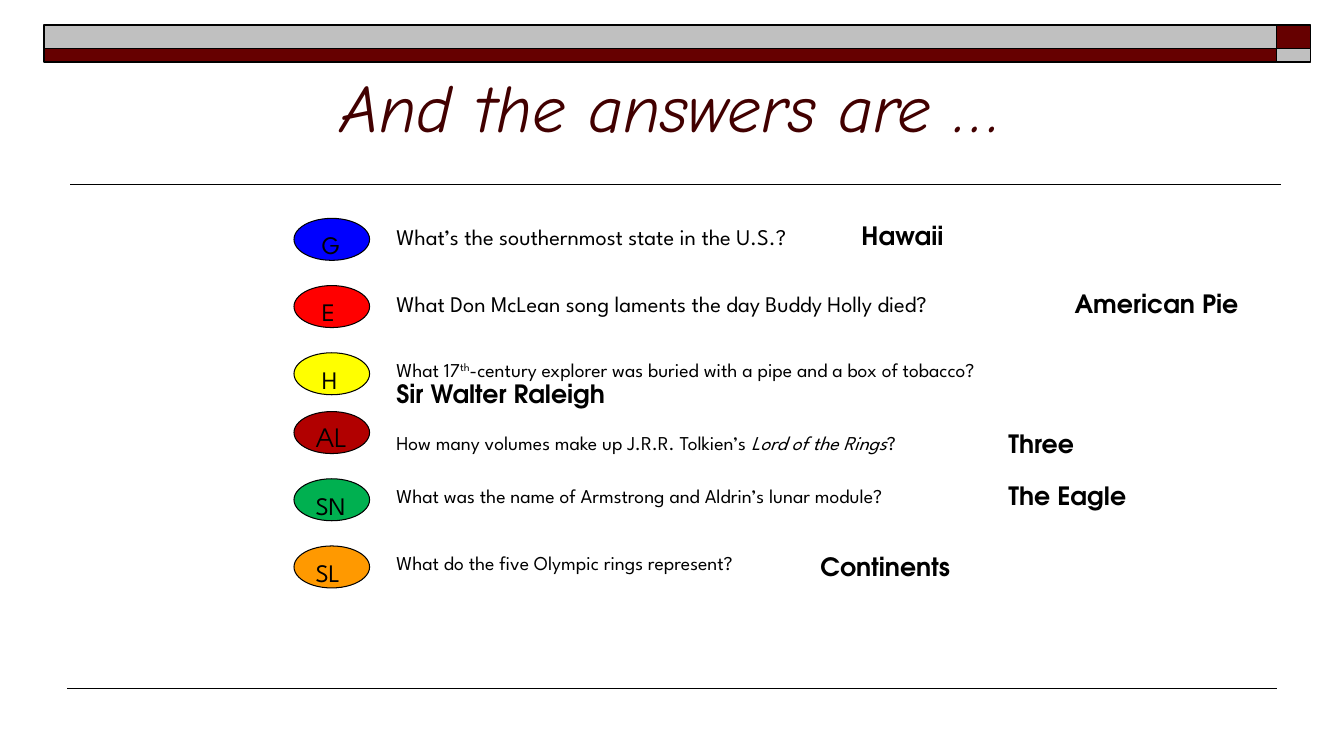
from pptx import Presentation
from pptx.dml.color import RGBColor
from pptx.enum.shapes import MSO_CONNECTOR, MSO_SHAPE
from pptx.enum.text import MSO_ANCHOR, PP_ALIGN
from pptx.util import Pt
from lxml import etree

PX = 9525
RECTANGLE, OVAL = MSO_SHAPE.RECTANGLE, MSO_SHAPE.OVAL
STRAIGHT = MSO_CONNECTOR.STRAIGHT
TOP, BOTTOM = MSO_ANCHOR.TOP, MSO_ANCHOR.BOTTOM
LEFT, CENTER = PP_ALIGN.LEFT, PP_ALIGN.CENTER

BLACK = RGBColor(0x00, 0x00, 0x00)
MAROON = RGBColor(0x66, 0x00, 0x00)
SILVER = RGBColor(0xC0, 0xC0, 0xC0)
TITLE_BROWN = RGBColor(0x42, 0x00, 0x00)
BLUE = RGBColor(0x00, 0x00, 0xFF)
RED = RGBColor(0xFF, 0x00, 0x00)
YELLOW = RGBColor(0xFF, 0xFF, 0x00)
DARK_RED = RGBColor(0xB1, 0x00, 0x00)
GREEN = RGBColor(0x00, 0xB0, 0x50)
ORANGE = RGBColor(0xFF, 0x99, 0x00)

TITLE_FONT = "Comic Neue"
QUESTION_FONT = "League Spartan"
ANSWER_FONT = "TeX Gyre Adventor"

deck = Presentation()
deck.slide_width, deck.slide_height = 1280 * PX, 720 * PX
page = deck.slides.add_slide(deck.slide_layouts[5])


def add_panel(kind, left, top, width, height, color, line_width):
    panel = page.shapes.add_shape(kind, left * PX, top * PX, width * PX, height * PX)
    panel.shadow.inherit = False
    panel.fill.solid()
    panel.fill.fore_color.rgb = color
    panel.line.color.rgb = BLACK
    panel.line.width = Pt(line_width)
    return panel


def write(frame, spans, size, font, bold=False):
    """Fill the frame with one paragraph of (text, style) spans."""
    frame.word_wrap = True
    frame.vertical_anchor = TOP
    para = frame.paragraphs[0]
    para.alignment = LEFT
    para.font.size = Pt(size)
    para.font.name = font
    para.font.bold = bold
    para.font.color.rgb = BLACK
    for text, style in spans:
        span = para.add_run()
        span.text = text
        if style == "italic":
            span.font.italic = True
        elif style == "superscript":
            span._r.get_or_add_rPr().set("baseline", "30000")


# Header bars
for left, top, width, height, color in [
    (1216, 24, 32, 22, MAROON),
    (42, 24, 1174, 22, SILVER),
    (42, 46, 1174, 13, MAROON),
    (1216, 46, 32, 13, SILVER),
]:
    add_panel(RECTANGLE, left, top, width, height, color, 1)

# Rules above and below the questions
for left, right, y, line_width in [(67, 1220, 176, 1), (64, 1216, 656, 0.75)]:
    rule = page.shapes.add_connector(STRAIGHT, left * PX, y * PX, right * PX, y * PX)
    rule.line.color.rgb = BLACK
    rule.line.width = Pt(line_width)
    etree.SubElement(
        rule._element.spPr,
        "{http://schemas.openxmlformats.org/drawingml/2006/main}effectLst")

# Title
title = page.shapes.title
title.left, title.top, title.width, title.height = 208 * PX, 24 * PX, 864 * PX, 120 * PX
title.text_frame.text = "And the answers are …"
title.text_frame.vertical_anchor = BOTTOM
heading = title.text_frame.paragraphs[0]
heading.alignment = CENTER
heading.font.size = Pt(48)
heading.font.name = TITLE_FONT
heading.font.italic = True
heading.font.color.rgb = TITLE_BROWN

# Category badges: top, letters, color, font, extra indent
for top, letters, color, font, indent in [
    (208, "G", BLUE, QUESTION_FONT, 6),
    (272, "E", RED, QUESTION_FONT, 6),
    (336, "H", YELLOW, QUESTION_FONT, 6),
    (392, "AL", DARK_RED, ANSWER_FONT, 0),
    (456, "SN", GREEN, QUESTION_FONT, 0),
    (520, "SL", ORANGE, QUESTION_FONT, 0),
]:
    badge = add_panel(OVAL, 280, top, 72, 40, color, 0.75)
    write(badge.text_frame, [(letters, None)], 18, font)
    badge.text_frame.margin_left = (10 + indent) * PX

# Questions: top, width, height, size, spans
for top, width, height, size, spans in [
    (208, 608, 36, 16, [("What’s the southernmost state in the U.S.?", None)]),
    (272, 648, 36, 16,
     [("What Don McLean song laments the day Buddy Holly died?", None)]),
    (336, 704, 33, 14,
     [("What 17", None), ("th", "superscript"),
      ("-century explorer was buried with a pipe and a box of tobacco?", None)]),
    (406, 680, 33, 14,
     [("How many volumes make up J.R.R. Tolkien’s ", None),
      ("Lord of the Rings", "italic"), ("?", None)]),
    (456, 704, 33, 14,
     [("What was the name of Armstrong and Aldrin’s lunar module?", None)]),
    (520, 688, 33, 14, [("What do the five Olympic rings represent?", None)]),
]:
    question = page.shapes.add_textbox(368 * PX, top * PX, width * PX, height * PX)
    write(question.text_frame, spans, size, QUESTION_FONT)

# Answers: left, top, width, text
for left, top, width, text in [
    (811, 205, 165, "Hawaii"),
    (1014, 270, 212, "American Pie"),
    (368, 356, 251, "Sir Walter Raleigh"),
    (951, 403, 112, "Three"),
    (951, 453, 146, "The Eagle"),
    (772, 520, 196, "Continents"),
]:
    answer = page.shapes.add_textbox(left * PX, top * PX, width * PX, 38 * PX)
    write(answer.text_frame, [(text, None)], 18, ANSWER_FONT, bold=True)

deck.save("out.pptx")
